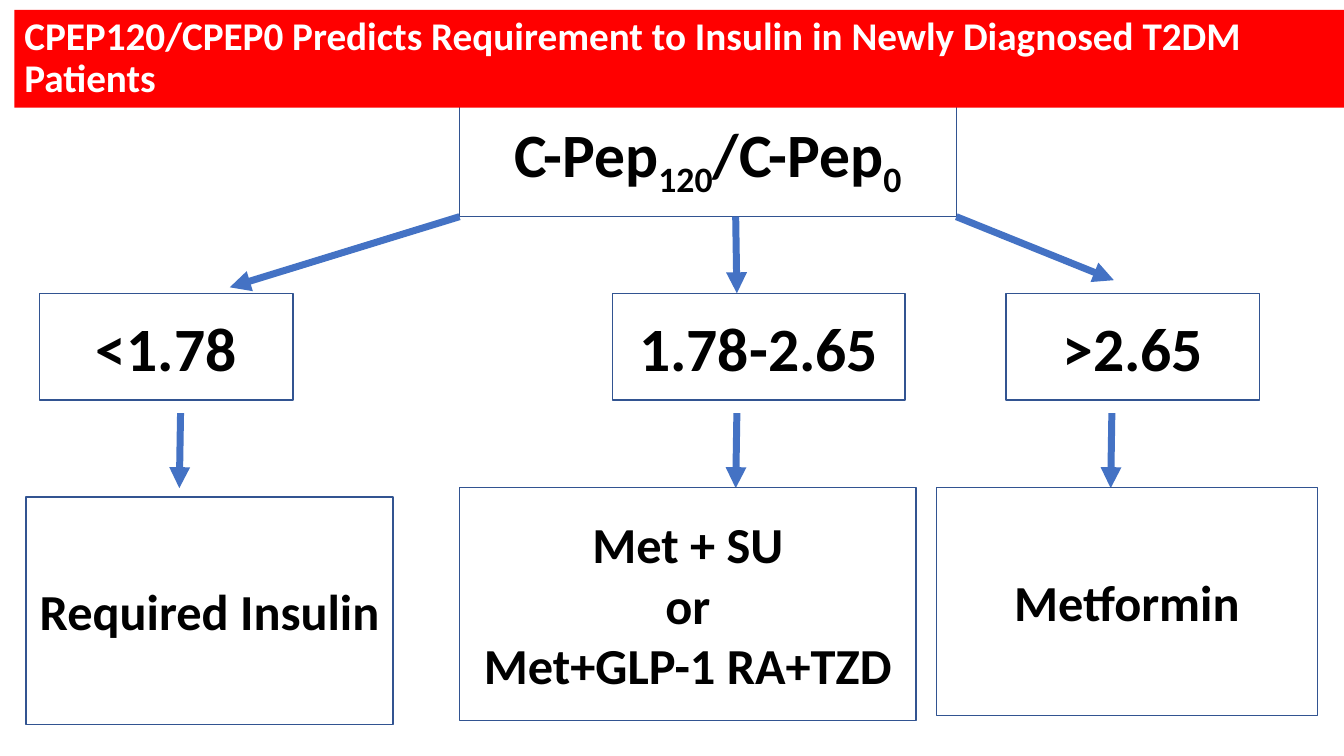
from dataclasses import dataclass

from lxml import etree
from pptx import Presentation
from pptx.dml.color import RGBColor
from pptx.enum.shapes import MSO_CONNECTOR, MSO_SHAPE
from pptx.enum.text import MSO_ANCHOR, MSO_AUTO_SIZE, PP_ALIGN
from pptx.oxml.ns import qn
from pptx.util import Cm, Pt

RECT = MSO_SHAPE.RECTANGLE
STRAIGHT = MSO_CONNECTOR.STRAIGHT
MIDDLE = MSO_ANCHOR.MIDDLE
NO_FIT = MSO_AUTO_SIZE.NONE
LEFT, CENTER = PP_ALIGN.LEFT, PP_ALIGN.CENTER
TITLE_ONLY = 5


@dataclass(frozen=True)
class Theme:
    font: str = "Calibri"
    ink: str = "000000"
    paper: str = "FFFFFF"
    banner: str = "FF0000"
    border: str = "325491"
    arrow: str = "4472C4"
    title: int = 28
    ratio: int = 44
    drug: int = 36
    thin: int = 1
    thick: int = 5


class Chart:
    """Draws the parts of a decision tree on one slide."""

    def __init__(self, slide, theme):
        self.slide = slide
        self.theme = theme

    def style(self, run, size, color):
        run.font.name = self.theme.font
        run.font.size = Pt(size)
        run.font.bold = True
        run.font.color.rgb = RGBColor.from_string(color)

    def fill(self, shape, color):
        shape.fill.solid()
        shape.fill.fore_color.rgb = RGBColor.from_string(color)

    def title(self, text, left, top, width, height):
        shape = self.slide.shapes.title
        shape.left, shape.top = Cm(left), Cm(top)
        shape.width, shape.height = Cm(width), Cm(height)
        self.fill(shape, self.theme.banner)
        frame = shape.text_frame
        frame.text = text
        frame.word_wrap = True
        frame.auto_size = NO_FIT
        frame.vertical_anchor = MIDDLE
        line = frame.paragraphs[0]
        line.alignment = LEFT
        line.line_spacing = 0.9
        line.space_before = Pt(0)
        self.style(line.runs[0], self.theme.title, self.theme.paper)
        # The banner lies over the top edge of the first box
        self.slide.shapes._spTree.append(shape._element)

    def box(self, lines, size, left, top, width, height):
        """Each line is a list of runs; every second run is a subscript."""
        shape = self.slide.shapes.add_shape(
            RECT, Cm(left), Cm(top), Cm(width), Cm(height))
        shape.shadow.inherit = False
        self.fill(shape, self.theme.paper)
        shape.line.color.rgb = RGBColor.from_string(self.theme.border)
        shape.line.width = Pt(self.theme.thin)
        frame = shape.text_frame
        frame.word_wrap = True
        frame.vertical_anchor = MIDDLE
        frame.text = "\n".join("" for _ in lines)
        for para, parts in zip(frame.paragraphs, lines):
            para.alignment = CENTER
            for i, part in enumerate(parts):
                run = para.add_run()
                run.text = part
                self.style(run, size, self.theme.ink)
                if i % 2:
                    run._r.get_or_add_rPr().set("baseline", "-25000")

    def arrow(self, x1, y1, x2, y2):
        link = self.slide.shapes.add_connector(
            STRAIGHT, Cm(x1), Cm(y1), Cm(x2), Cm(y2))
        link.line.color.rgb = RGBColor.from_string(self.theme.arrow)
        link.line.width = Pt(self.theme.thick)
        tail = etree.SubElement(link.line._get_or_add_ln(), qn("a:tailEnd"))
        tail.set("type", "triangle")
        etree.SubElement(link._element.spPr, qn("a:effectLst"))


def main():
    deck = Presentation()
    deck.slide_width, deck.slide_height = Cm(33.87), Cm(19.05)
    theme = Theme()
    chart = Chart(deck.slides.add_slide(deck.slide_layouts[TITLE_ONLY]), theme)

    # Root of the tree
    chart.box([["C-Pep", "120", "/C-Pep", "0"]], theme.ratio,
              11.58, 2.49, 12.52, 2.97)

    # Arrows from the root to the ratio ranges
    for x1, x2, y2 in ((11.58, 5.79, 7.24), (18.54, 18.57, 7.39),
                       (24.1, 28.07, 7.06)):
        chart.arrow(x1, 5.46, x2, y2)

    # Ratio ranges
    for text, left, width in (("<1.78", 0.99, 6.4), ("1.78-2.65", 15.44, 7.37),
                              (">2.65", 25.35, 6.4)):
        chart.box([[text]], theme.ratio, left, 7.39, width, 2.69)

    # Arrows from the ranges to the treatments
    for x in (4.55, 18.57, 28.02):
        chart.arrow(x, 10.41, x - 0.03, 12.3)

    # Treatments
    for lines, *place in (
            (["Required Insulin"], 0.66, 12.52, 9.25, 5.74),
            (["Met + SU", "or", "Met+GLP-1 RA+TZD"], 11.58, 12.29, 11.51, 5.87),
            (["Metformin"], 23.6, 12.29, 9.6, 5.74)):
        chart.box([[line] for line in lines], theme.drug, *place)

    # Banner
    chart.title("CPEP120/CPEP0 Predicts Requirement to Insulin in Newly "
                "Diagnosed T2DM Patients", 0.36, 0.25, 33.88, 2.46)

    deck.save("out.pptx")


if __name__ == "__main__":
    main()
